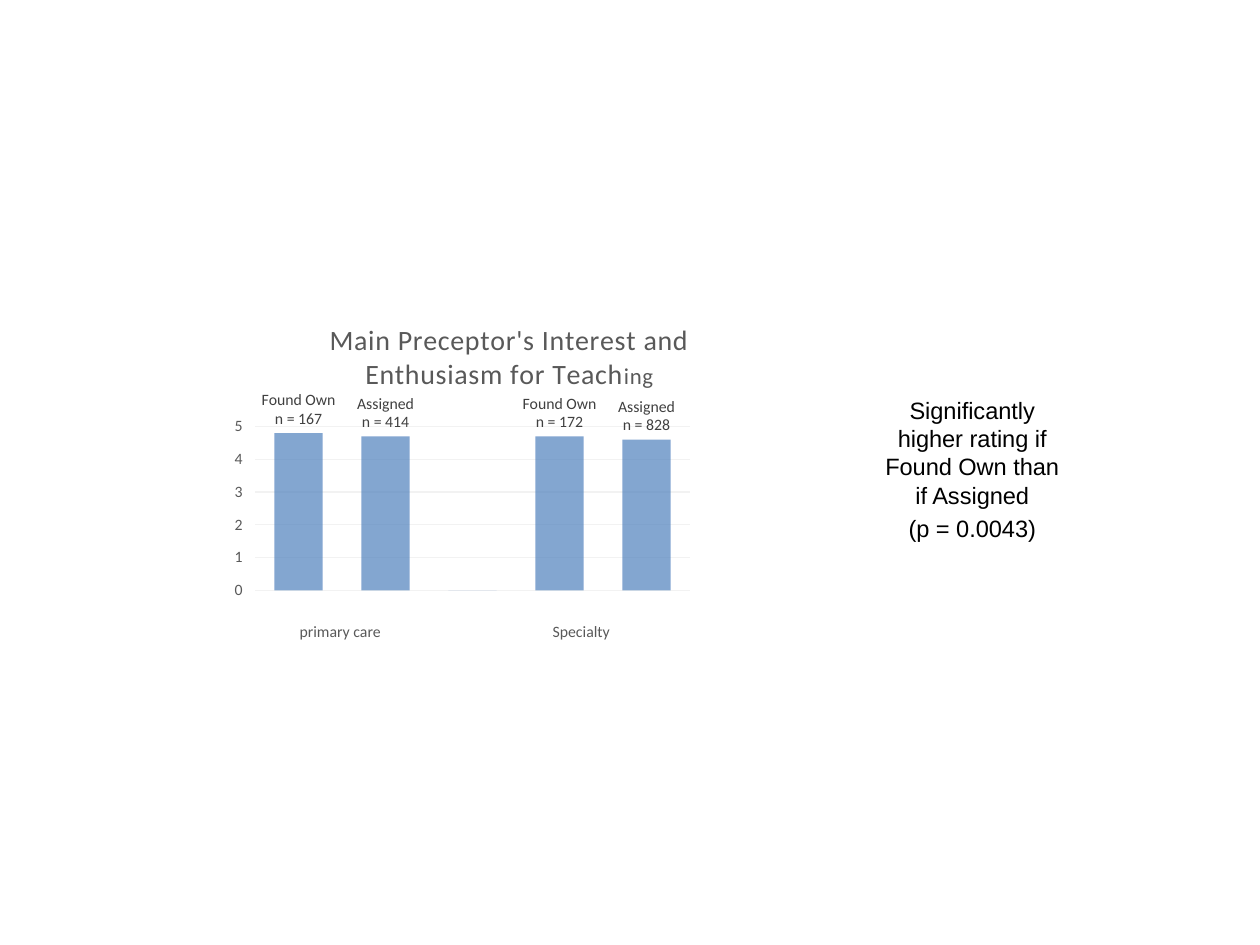
import pptx
import pptx.chart.data
import pptx.dml.color
import pptx.enum.chart
import pptx.enum.text
import pptx.oxml
import pptx.oxml.ns
import pptx.util

Cm = pptx.util.Cm
Pt = pptx.util.Pt
RGBColor = pptx.dml.color.RGBColor
BLACK = RGBColor(0x00, 0x00, 0x00)
DARK = RGBColor(0x40, 0x40, 0x40)
GREY = RGBColor(0x59, 0x59, 0x59)
PALE = RGBColor(0xF2, 0xF2, 0xF2)
BLUE = RGBColor(0x4F, 0x81, 0xBD)
BARS = [
    (4.8, "Found Own", "n = 167"),
    (4.7, "Assigned", "n = 414"),
    (0, "", ""),
    (4.7, "Found Own", "n = 172"),
    (4.6, "Assigned", "n = 828"),
]


def write(para, text, size=9, color=GREY, font="Calibri", track=0):
    """Add a formatted run to a paragraph and centre the paragraph."""
    para.alignment = pptx.enum.text.PP_ALIGN.CENTER
    run = para.add_run()
    run.text = text
    run.font.size = Pt(size)
    run.font.name = font
    run.font.bold = False
    run.font.color.rgb = color
    if track:
        run.font._element.set("spc", str(track))


def place(parent, left, top, width=None, height=None):
    """Give a chart part a manual layout in fractions of the chart."""
    for old in parent.findall(pptx.oxml.ns.qn("c:layout")):
        parent.remove(old)
    target = '<c:layoutTarget val="inner"/>' if width else ""
    spots = [("x", left), ("y", top), ("w", width), ("h", height)]
    sizes = "".join(f'<c:{key} val="{val}"/>'
                    for key, val in spots if val is not None)
    layout = pptx.oxml.parse_xml(
        f'<c:layout {pptx.oxml.ns.nsdecls("c")}><c:manualLayout>{target}'
        f'<c:xMode val="edge"/><c:yMode val="edge"/>{sizes}'
        f"</c:manualLayout></c:layout>")
    text = parent.find(pptx.oxml.ns.qn("c:tx"))
    parent.insert(0 if text is None else 1, layout)


def add_title(chart):
    """Write the chart title in two lines."""
    frame = chart.chart_title.text_frame
    write(frame.paragraphs[0], "Main Preceptor's Interest and", size=16, track=50)
    last = frame.add_paragraph()
    write(last, "Enthusiasm for Teach", size=16, track=50)
    write(last, "ing", size=13, track=50)
    place(chart.chart_title._element, 0.21, 0)


def style_axes(chart):
    """Hide the category axis and format the value axis."""
    chart.category_axis.visible = False
    axis = chart.value_axis
    axis.minimum_scale, axis.maximum_scale, axis.major_unit = 0, 5, 1
    axis.major_tick_mark = pptx.enum.chart.XL_TICK_MARK.OUTSIDE
    axis.format.line.fill.background()
    axis.major_gridlines.format.line.color.rgb = PALE
    axis.major_gridlines.format.line.width = Pt(0.75)
    axis.tick_labels.font.size = Pt(9)
    axis.tick_labels.font.color.rgb = GREY


def style_bars(plot):
    """Colour the bars and label each with its group and count."""
    plot.gap_width, plot.overlap = 80, 25
    plot.vary_by_categories = False
    series = plot.series[0]
    series.format.fill.solid()
    series.format.fill.fore_color.rgb = BLUE
    color = series._element.find(".//" + pptx.oxml.ns.qn("a:srgbClr"))
    color.append(pptx.oxml.parse_xml(
        f'<a:alpha {pptx.oxml.ns.nsdecls("a")} val="70000"/>'))
    for i, (value, group, count) in enumerate(BARS):
        if group:
            label = series.points[i].data_label
            frame = label.text_frame
            write(frame.paragraphs[0], group, color=DARK)
            write(frame.add_paragraph(), count, color=DARK)
            label.position = pptx.enum.chart.XL_LABEL_POSITION.OUTSIDE_END


def add_chart(slide, left, top, width, height):
    """Draw the rating chart and the two group names below its bars."""
    data = pptx.chart.data.CategoryChartData()
    data.categories = [str(i + 1) for i in range(len(BARS))]
    data.add_series("Series 1", [bar[0] for bar in BARS])
    kind = pptx.enum.chart.XL_CHART_TYPE.COLUMN_CLUSTERED
    chart = slide.shapes.add_chart(kind, left, top, width, height, data).chart
    chart.has_legend = False
    chart.font.name = "Calibri"
    chart.font.size = Pt(10)
    chart.font.color.rgb = BLACK
    add_title(chart)
    style_axes(chart)
    style_bars(chart.plots[0])
    place(chart._chartSpace.chart.plotArea, 0.06, 0.32, 0.92, 0.48)
    for name, mid in (("primary care", 0.24), ("Specialty", 0.75)):
        wide, tall = Cm(3), Cm(0.6)
        box = slide.shapes.add_textbox(
            left + int(width * mid - wide / 2),
            top + int(height * 0.92 - tall / 2), wide, tall)
        box.text_frame.word_wrap = True
        box.text_frame.vertical_anchor = pptx.enum.text.MSO_ANCHOR.MIDDLE
        write(box.text_frame.paragraphs[0], name)


def add_note(slide, left, top, width, height):
    """Fill the body placeholder with the finding."""
    body = slide.placeholders[1]
    body.left, body.top, body.width, body.height = left, top, width, height
    frame = body.text_frame
    frame.auto_size = pptx.enum.text.MSO_AUTO_SIZE.NONE
    lines = ["Significantly higher rating if Found Own than if Assigned",
             "(p = 0.0043)"]
    for i, line in enumerate(lines):
        para = frame.add_paragraph() if i else frame.paragraphs[0]
        props = para._p.get_or_add_pPr()
        props.set("marL", "0")
        props.set("indent", "0")
        props.append(pptx.oxml.parse_xml(
            f'<a:buNone {pptx.oxml.ns.nsdecls("a")}/>'))
        para.space_before = Pt(2.7 * i)
        para.line_spacing = 1.0
        write(para, line, size=13.5, color=BLACK, font="Arial")


def main():
    """Build the slide and save it."""
    deck = pptx.Presentation()
    deck.slide_width, deck.slide_height = Cm(25.4), Cm(19.05)
    slide = deck.slides.add_slide(deck.slide_layouts[1])
    title = slide.shapes.title._element
    title.getparent().remove(title)
    add_note(slide, Cm(17.53), Cm(7.85), Cm(4.14), Cm(6.65))
    add_chart(slide, Cm(4.57), Cm(6.4), Cm(9.53), Cm(6.88))
    deck.save("out.pptx")


if __name__ == "__main__":
    main()
